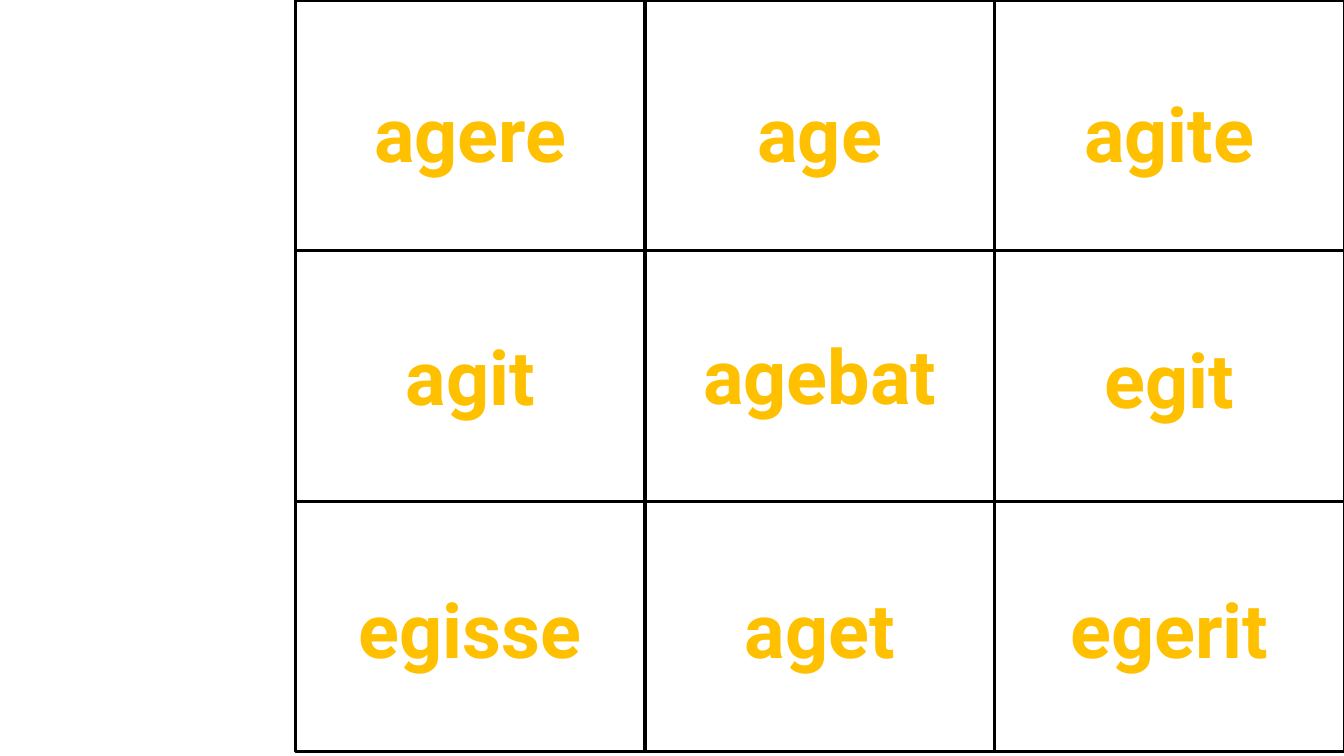
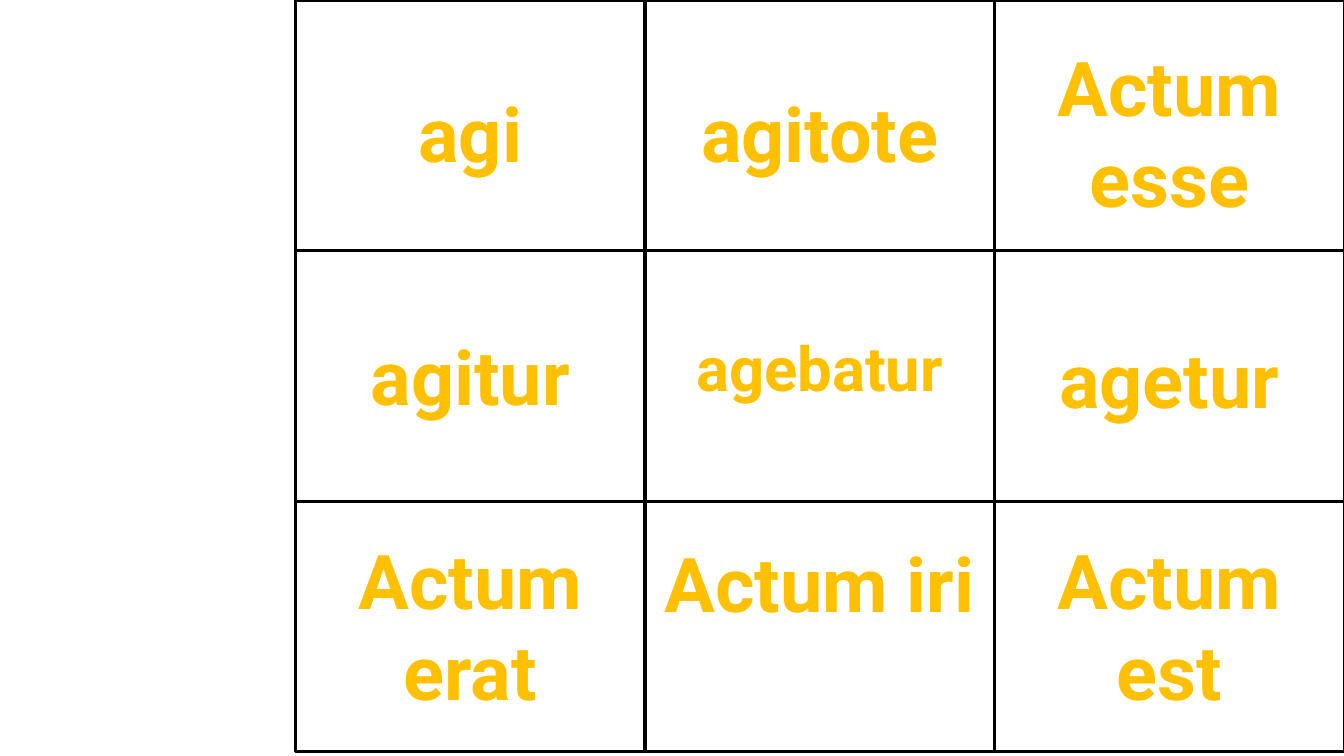
import pptx
import pptx.dml.color
import pptx.enum.shapes
import pptx.enum.text
import pptx.oxml
import pptx.oxml.ns
import pptx.util

Pt = pptx.util.Pt

# Shared look
BLACK, GOLD = "000000", "FFC000"
FONT = "Roboto"
LEFT, WIDE, HIGH = 211, 249.7, 179
COUNT = 3

# Words of each grid, row by row: text, top, and size where it differs
ACTIVE = [
    [("agere", 58.3), ("age", 58.3), ("agite", 58.3)],
    [("agit", 232), ("agebat", 231.5), ("egit", 234)],
    [("egisse", 412.6), ("aget", 412.6), ("egerit", 412.6)],
]
PASSIVE = [
    [("agi", 58.3), ("agitote", 58.3), ("Actum esse", 26)],
    [("agitur", 232), ("agebatur", 232, 44), ("agetur", 234)],
    [("Actum erat", 378), ("Actum iri", 380), ("Actum est", 378)],
]


def color(code):
    return pptx.dml.color.RGBColor.from_string(code)


def outline(run, code, width):
    """Draw a line around the letters of a run."""
    line = pptx.oxml.parse_xml(
        f'<a:ln {pptx.oxml.ns.nsdecls("a")} w="{Pt(width)}">'
        f'<a:solidFill><a:srgbClr val="{code}"/></a:solidFill></a:ln>')
    run.font._element.insert(0, line)


def write(slide, text, left, top, width, height, size=54, code=GOLD):
    box = slide.shapes.add_textbox(Pt(left), Pt(top), Pt(width), Pt(height))
    frame = box.text_frame
    frame.word_wrap = True
    frame.auto_size = pptx.enum.text.MSO_AUTO_SIZE.SHAPE_TO_FIT_TEXT
    para = frame.paragraphs[0]
    para.alignment = pptx.enum.text.PP_ALIGN.CENTER
    run = para.add_run()
    run.text = text
    font = run.font
    font.name, font.size, font.bold = FONT, Pt(size), True
    font.color.rgb = color(code)
    outline(run, code, 1.75)


def frame_cell(slide, left, top):
    cell = slide.shapes.add_shape(
        pptx.enum.shapes.MSO_SHAPE.RECTANGLE,
        Pt(left), Pt(top), Pt(WIDE), Pt(HIGH))
    cell.shadow.inherit = False
    cell.fill.background()
    cell.line.color.rgb = color(BLACK)
    cell.line.width = Pt(2.25)


def add_grid(deck, rows):
    slide = deck.slides.add_slide(deck.slide_layouts[6])
    lefts = [LEFT + WIDE * col for col in range(COUNT)]
    # Cells
    for row in range(COUNT):
        for left in lefts:
            frame_cell(slide, left, HIGH * row)
    # Words
    for words in rows:
        for left, (text, top, *size) in zip(lefts, words):
            lines = len(text.split())
            points = size[0] if size else 54
            height = 7.2 + 1.213 * points * lines
            write(slide, text, left, top, WIDE, height, size=points)


def main():
    deck = pptx.Presentation()
    deck.slide_width, deck.slide_height = Pt(960), Pt(540)
    for rows in (ACTIVE, PASSIVE):
        add_grid(deck, rows)
    deck.save("out.pptx")


if __name__ == "__main__":
    main()
